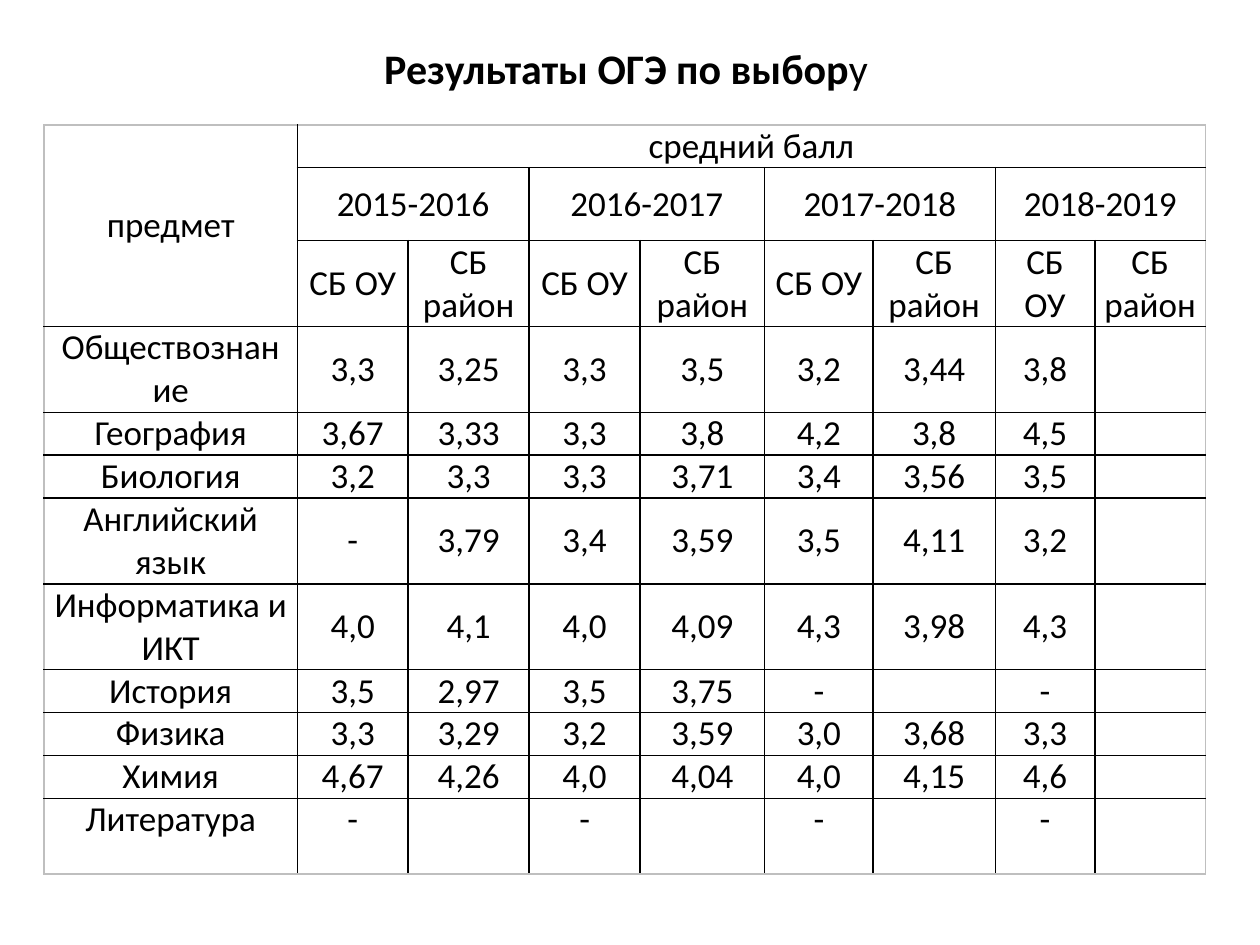
from pptx import Presentation
from pptx.dml.color import RGBColor as RGB
from pptx.enum.text import MSO_ANCHOR as Anchor, PP_ALIGN as Align
from pptx.oxml.ns import qn
from pptx.util import Inches, Pt
from lxml.etree import SubElement as Sub

# Content
title = [("Результаты ОГЭ по выбор", True), ("у", False)]
years = ["2015-2016", "2016-2017", "2017-2018", "2018-2019"]
pair = ["СБ ОУ", "СБ район"]
marks = [
    ("Обществознание", "3,3", "3,25", "3,3", "3,5", "3,2", "3,44", "3,8", ""),
    ("География", "3,67", "3,33", "3,3", "3,8", "4,2", "3,8", "4,5", ""),
    ("Биология", "3,2", "3,3", "3,3", "3,71", "3,4", "3,56", "3,5", ""),
    ("Английский язык", "-", "3,79", "3,4", "3,59", "3,5", "4,11", "3,2", ""),
    ("Информатика и ИКТ", "4,0", "4,1", "4,0", "4,09", "4,3", "3,98", "4,3", ""),
    ("История", "3,5", "2,97", "3,5", "3,75", "-", "", "-", ""),
    ("Физика", "3,3", "3,29", "3,2", "3,59", "3,0", "3,68", "3,3", ""),
    ("Химия", "4,67", "4,26", "4,0", "4,04", "4,0", "4,15", "4,6", ""),
    ("Литература", "-", "", "-", "", "-", "", "-", ""),
]
rows = [
    ["предмет", "средний балл"] + [""] * 7,
    [""] + [text for year in years for text in (year, "")],
    [""] + pair * len(years),
    *marks,
]

# Theme and layout
theme = {"font": "Calibri", "ink": "000000", "edge": "BFBFBF",
         "head": 24, "body": 20, "line": 1}
widths = [2.01, 0.88, 0.96, 0.88, 0.99, 0.86, 0.97, 0.79, 0.88]
one, two = 0.34, 0.68  # heights of one and two lines of text
heights = [one, 0.58, two, two, one, one, two, two, one, one, one, 0.6]
last_row, last_col = len(heights) - 1, len(widths) - 1
spans = {(0, 0): (3, 1), (0, 1): (1, 8)}
spans.update({(1, 1 + 2 * i): (1, 2) for i in range(len(years))})
cell_form = {"margin_left": Inches(0.07), "margin_right": Inches(0.07),
             "margin_top": 0, "margin_bottom": 0}


def put(para, text, size, bold=False):
    run = para.add_run()
    run.text = text
    form = {"name": theme["font"], "size": Pt(size), "bold": bold}
    for key, val in form.items():
        setattr(run.font, key, val)
    run.font.color.rgb = RGB.from_string(theme["ink"])


def rule(cell, row, col):
    """Line all four sides, with a paler line round the table."""
    high, wide = spans.get((row, col), (1, 1))
    outer = {"L": col == 0, "R": col + wide > last_col,
             "T": row == 0, "B": row + high > last_row}
    props = cell._tc.get_or_add_tcPr()
    for side, pale in outer.items():
        line = Sub(props, qn(f"a:ln{side}"), w=str(Pt(theme["line"])))
        fill = Sub(line, qn("a:solidFill"))
        Sub(fill, qn("a:srgbClr"), val=theme["edge" if pale else "ink"])


deck = Presentation()
deck.slide_width, deck.slide_height = Inches(10), Inches(7.5)
slide = deck.slides.add_slide(deck.slide_layouts[6])

# Table of marks
table = slide.shapes.add_table(
    len(heights), len(widths), Inches(0.35), Inches(0.99),
    Inches(sum(widths)), Inches(sum(heights))).table
table.first_row = table.horz_banding = False
for col, width in zip(table.columns, widths):
    col.width = Inches(width)
for row, height in zip(table.rows, heights):
    row.height = Inches(height)
for (r, c), (high, wide) in spans.items():
    table.cell(r, c).merge(table.cell(r + high - 1, c + wide - 1))

for r, row in enumerate(rows):
    for c, text in enumerate(row):
        cell = table.cell(r, c)
        for key, val in cell_form.items():
            setattr(cell, key, val)
        top = r == last_row or (r, c) == (0, 1)
        cell.vertical_anchor = Anchor.TOP if top else Anchor.MIDDLE
        rule(cell, r, c)
        cell.fill.background()
        if text:
            para = cell.text_frame.paragraphs[0]
            para.alignment = Align.CENTER
            put(para, text, theme["body"])

# Title
box = slide.shapes.add_textbox(Inches(2.95), Inches(0.29), Inches(4.09), Inches(0.5))
box.text_frame.word_wrap = False
for text, bold in title:
    put(box.text_frame.paragraphs[0], text, theme["head"], bold)

deck.save("out.pptx")
